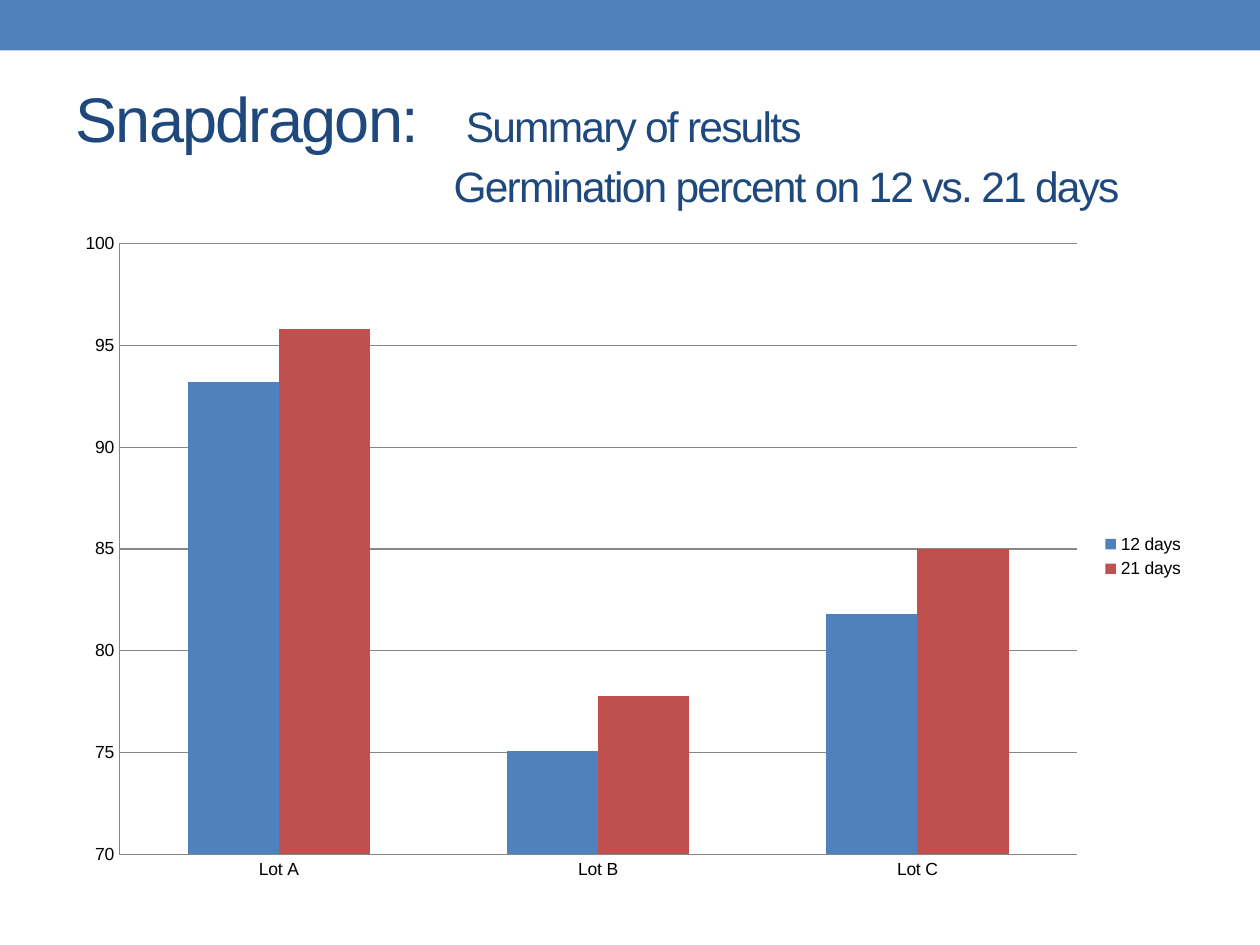
from lxml.etree import SubElement
from pptx import Presentation
from pptx.chart.data import CategoryChartData
from pptx.dml.color import RGBColor
from pptx.enum.chart import XL_CHART_TYPE, XL_LEGEND_POSITION, XL_TICK_MARK
from pptx.enum.shapes import MSO_SHAPE
from pptx.enum.text import MSO_ANCHOR, MSO_AUTO_SIZE, PP_ALIGN
from pptx.oxml.ns import qn
from pptx.util import Pt


def rgb(hex_code):
    return RGBColor.from_string(hex_code)


class SlideBuilder:
    FONT = "Arial"
    BLUE, RED, NAVY = "4F81BD", "C0504D", "1F497D"
    BLACK, GRAY = "000000", "878787"

    def __init__(self, slide):
        self.slide = slide

    def band(self, left, top, width, height, color):
        band = self.slide.shapes.add_shape(
            MSO_SHAPE.RECTANGLE, Pt(left), Pt(top), Pt(width), Pt(height))
        band.shadow.inherit = False
        band.fill.solid()
        band.fill.fore_color.rgb = rgb(color)
        band.line.fill.background()

    def style_run(self, run, size):
        run.font.name = self.FONT
        run.font.size = Pt(size)
        run.font.color.rgb = rgb(self.NAVY)
        run.font._element.set("spc", "-100")

    def title(self, left, top, width, height, topic, subtitle, detail):
        title = self.slide.shapes.title
        title.left, title.top = Pt(left), Pt(top)
        title.width, title.height = Pt(width), Pt(height)
        frame = title.text_frame
        frame.word_wrap = True
        frame.auto_size = MSO_AUTO_SIZE.NONE
        frame.vertical_anchor = MSO_ANCHOR.MIDDLE

        heading = frame.paragraphs[0]
        self.style_run(heading.add_run(), 36)
        self.style_run(heading.add_run(), 24.3)
        heading.runs[0].text = topic
        heading.runs[1].text = "\t" + subtitle
        second_line = frame.add_paragraph()
        second_line.text = detail
        self.style_run(second_line.runs[0], 24.3)
        for paragraph in frame.paragraphs:
            paragraph.alignment = PP_ALIGN.LEFT
            paragraph.line_spacing = 1.1
            paragraph.space_before = Pt(0)

        # The subtitle starts at a tab stop, the detail at an indent
        tabs = SubElement(heading._p.get_or_add_pPr(), qn("a:tabLst"))
        SubElement(tabs, qn("a:tab"), pos=str(Pt(223)), algn="l")
        indent = second_line._p.get_or_add_pPr()
        indent.set("marL", str(Pt(216)))
        indent.set("indent", "0")

    def column_chart(self, left, top, width, height, lots, series):
        data = CategoryChartData()
        data.categories = lots
        for name, percents, _ in series:
            data.add_series(name, percents)
        chart = self.slide.shapes.add_chart(
            XL_CHART_TYPE.COLUMN_CLUSTERED,
            Pt(left), Pt(top), Pt(width), Pt(height), data).chart
        chart.has_title = False
        chart.font.name = self.FONT
        chart.font.size = Pt(10)
        chart.font.color.rgb = rgb(self.BLACK)
        chart.has_legend = True
        chart.legend.position = XL_LEGEND_POSITION.RIGHT
        chart.legend.include_in_layout = False

        # Columns
        plot = chart.plots[0]
        plot.gap_width = 150
        plot.overlap = 0
        plot.vary_by_categories = False
        for columns, (_, _, color) in zip(plot.series, series):
            columns.format.fill.solid()
            columns.format.fill.fore_color.rgb = rgb(color)

        # Axes and gridlines
        percent_axis = chart.value_axis
        percent_axis.minimum_scale = 70
        percent_axis.maximum_scale = 100
        percent_axis.major_unit = 5
        percent_axis.has_major_gridlines = True
        for axis in (chart.category_axis, percent_axis):
            axis.major_tick_mark = XL_TICK_MARK.NONE
            axis.minor_tick_mark = XL_TICK_MARK.NONE
        for ruled in (chart.category_axis, percent_axis,
                      percent_axis.major_gridlines):
            ruled.format.line.color.rgb = rgb(self.GRAY)
            ruled.format.line.width = Pt(0.75)


def main():
    deck = Presentation()
    deck.slide_width, deck.slide_height = Pt(720), Pt(540)
    builder = SlideBuilder(deck.slides.add_slide(deck.slide_layouts[5]))

    # Top band and title
    builder.band(0, 0, 720, 28.8, builder.BLUE)
    builder.title(36, 42, 648, 78, "Snapdragon:", "Summary of results",
                  "Germination percent on 12 vs. 21 days")

    # Germination by lot
    builder.column_chart(
        36, 126, 648, 384, ["Lot A", "Lot B", "Lot C"],
        [("12 days", (93.2, 75.1, 81.8), builder.BLUE),
         ("21 days", (95.8, 77.8, 85), builder.RED)])

    deck.save("out.pptx")


if __name__ == "__main__":
    main()
